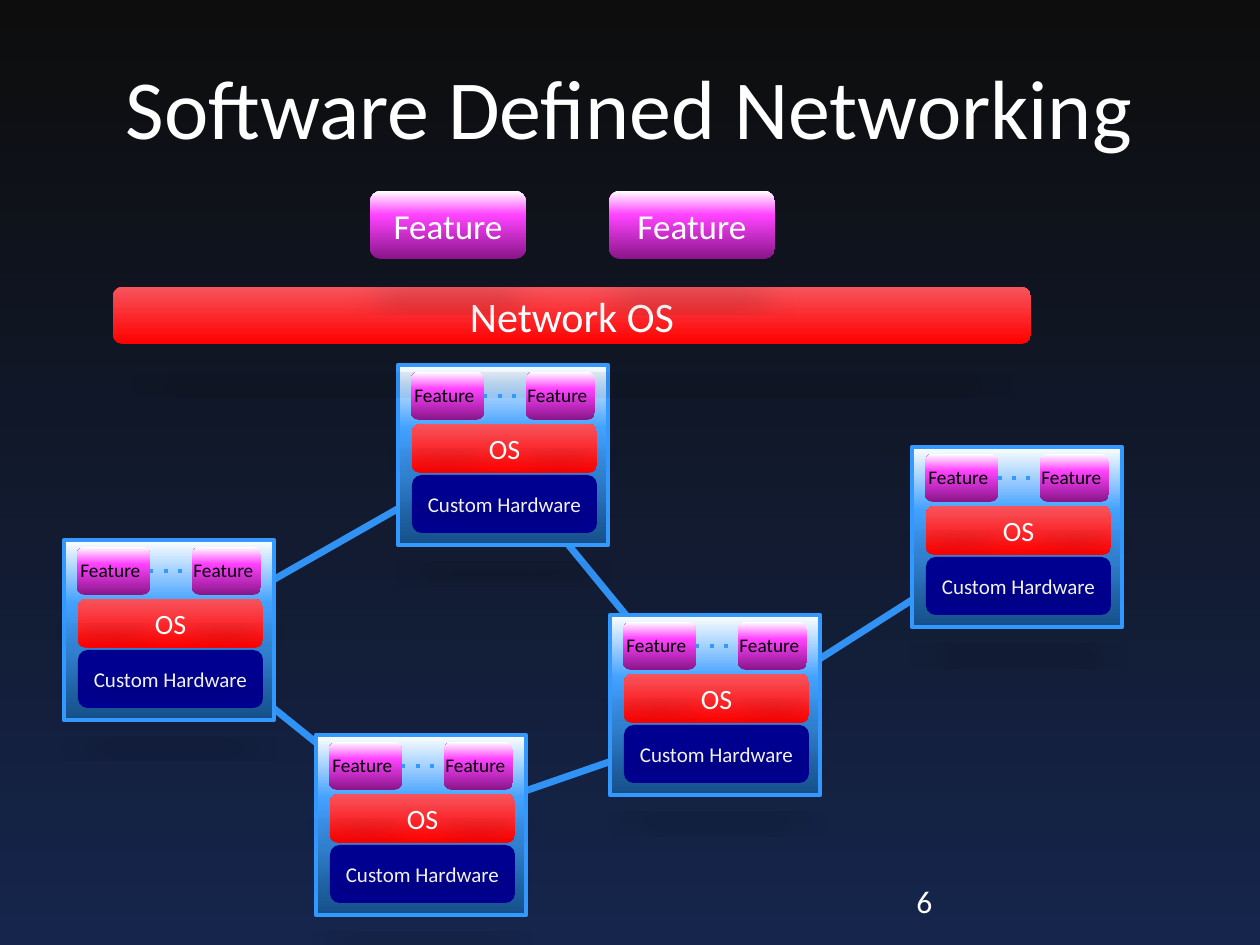
from copy import deepcopy

from lxml import etree
from pptx import Presentation
from pptx import util as u
from pptx.dml.color import RGBColor
from pptx.enum import shapes, text
from pptx.oxml.ns import qn

EMU_PER_PX = 914400 / 126
FONT = "Calibri"
BLUE, NAVY, WHITE, BLACK = "3399FF", "000090", "FFFFFF", "000000"
NIGHT = [(0, "0D0D0D"), (1, "15254B")]
STEEL = [(0, "154F89"), (0.65, "43A1FF"), (1, WHITE)]
RED = [(0, "FF0000"), (1, "F7545C")]
MAGENTA = [(0, "891589"), (0.65, "FF43FF"), (1, WHITE)]

DEVICE_SIZE = (210, 180)
# name: (left, top), (x, y) where its links meet
DEVICES = {
    "west": ((64, 540), (180, 633)),
    "north": ((398, 365), (494, 454)),
    "east": ((912, 447), (1017, 533)),
    "south": ((316, 735), (421, 827)),
    "centre": ((610, 615), (716, 725)),
}
LINKS = [("west", "north"), ("north", "centre"), ("south", "centre"),
         ("west", "south"), ("centre", "east")]


def px(*lengths):
    return [u.Emu(round(length * EMU_PER_PX)) for length in lengths]


def color(hex_value):
    return RGBColor.from_string(hex_value)


def set_gradient(fill, element, stops, angle=90):
    """Fill with any number of stops; angle runs counter-clockwise."""
    fill.gradient()
    fill.gradient_angle = angle
    stop_list = element.xpath(".//a:gsLst")[0]
    for _ in range(len(stops) - 2):
        stop_list.append(deepcopy(stop_list[-1]))
    for stop, (position, hex_value) in zip(fill.gradient_stops, stops):
        stop.position = position
        stop.color.rgb = color(hex_value)


def add_floor_shadow(shape):
    """Cast a flattened, blurred shadow below the shape."""
    effects = shape.element.spPr.find(qn("a:effectLst"))
    shadow = etree.SubElement(
        effects, qn("a:outerShdw"), blurRad=str(u.Pt(20)), dist=str(u.Pt(20)),
        dir="5400000", sx="90000", sy="-19000", rotWithShape="0")
    tint = etree.SubElement(shadow, qn("a:srgbClr"), val=BLACK)
    etree.SubElement(tint, qn("a:alpha"), val="25000")


def write(shape, words, size, font_color=WHITE, align=text.PP_ALIGN.CENTER,
          anchor=text.MSO_ANCHOR.MIDDLE, wrap=True):
    frame = shape.text_frame
    frame.word_wrap = wrap
    frame.vertical_anchor = anchor
    paragraph = frame.paragraphs[0]
    paragraph.alignment = align
    run = paragraph.add_run()
    run.text = words
    run.font.name = FONT
    run.font.size = u.Pt(size)
    run.font.color.rgb = color(font_color)


def add_block(parent, box, fill, words="", size=12):
    """Add a rounded block; fill is a hex colour or a list of stops."""
    shape = parent.shapes.add_shape(
        shapes.MSO_SHAPE.ROUNDED_RECTANGLE, *px(*box))
    shape.shadow.inherit = False
    add_floor_shadow(shape)
    if isinstance(fill, str):
        shape.fill.solid()
        shape.fill.fore_color.rgb = color(fill)
    else:
        set_gradient(shape.fill, shape.element.spPr, fill)
    shape.line.fill.background()
    if words:
        write(shape, words, size)
    return shape


def add_label(parent, box, words, size, wrap=True, **style):
    label = parent.shapes.add_textbox(*px(*box))
    write(label, words, size, align=text.PP_ALIGN.LEFT,
          anchor=text.MSO_ANCHOR.TOP, wrap=wrap, **style)
    if not wrap:
        label.text_frame.auto_size = text.MSO_AUTO_SIZE.SHAPE_TO_FIT_TEXT


def add_line(parent, start, end, width):
    line = parent.shapes.add_connector(
        shapes.MSO_CONNECTOR.STRAIGHT, *px(*start, *end))
    line.line.color.rgb = color(BLUE)
    line.line.width = u.Pt(width)
    etree.SubElement(line.element.spPr, qn("a:effectLst"))
    return line


def add_link(slide, start, end):
    line = add_line(slide, start, end, 4)
    tint = line.element.xpath(".//a:ln//a:srgbClr")[0]
    etree.SubElement(tint, qn("a:alpha"), val="95000")


def add_device_case(slide, left, top):
    case = slide.shapes.add_shape(
        shapes.MSO_SHAPE.RECTANGLE, *px(left, top, *DEVICE_SIZE))
    case.shadow.inherit = False
    set_gradient(case.fill, case.element.spPr, STEEL)
    case.line.color.rgb = color(BLUE)
    case.line.width = u.Pt(2.5)
    add_block(slide, (left + 14, top + 110, 185, 58), NAVY, "Custom Hardware")


def add_feature_row(slide, left, top):
    """Add two small features joined by dots, with their labels on top."""
    group = slide.shapes.add_group_shape()
    first = add_block(group, (left + 13, top + 7, 73, 48), MAGENTA)
    second = add_block(group, (left + 128, top + 7, 69, 48), MAGENTA)
    dots = add_line(group, (left + 86, top + 31), (left + 128, top + 31), 2)
    dots.begin_connect(first, 3)
    dots.end_connect(second, 1)
    outline = dots.element.xpath(".//a:ln")[0]
    etree.SubElement(outline, qn("a:prstDash"), val="dot")
    for offset in (4, 117):
        add_label(group, (left + offset, top + 12, 92, 37), "Feature", 11,
                  wrap=False, font_color=BLACK)


def add_title(slide, words):
    title = slide.shapes.title
    title.left, title.top, title.width, title.height = px(88, 62, 1082, 101)
    write(title, words, 48, anchor=text.MSO_ANCHOR.BOTTOM)
    title.text_frame.auto_size = text.MSO_AUTO_SIZE.NONE


def main():
    presentation = Presentation()
    presentation.slide_width, presentation.slide_height = px(1260, 945)
    slide = presentation.slides.add_slide(presentation.slide_layouts[5])
    set_gradient(slide.background.fill, slide.element, NIGHT, angle=270)
    add_title(slide, "Software Defined Networking")

    for start, end in LINKS:
        add_link(slide, DEVICES[start][1], DEVICES[end][1])
    corners = [corner for corner, _ in DEVICES.values()]
    for left, top in corners:
        add_device_case(slide, left, top)
    for left, top in corners:
        add_block(slide, (left + 14, top + 59, 185, 49), RED, "OS", 16)

    add_block(slide, (113, 287, 918, 57), RED, "Network OS", 24)
    features = slide.shapes.add_group_shape()
    for left, width in ((370, 156), (609, 166)):
        add_block(features, (left, 191, width, 68), MAGENTA, "Feature", 20)
    for left, top in corners:
        add_feature_row(slide, left, top)

    add_label(slide, (904, 876, 293, 50), "6", 18)
    presentation.save("out.pptx")


if __name__ == "__main__":
    main()
